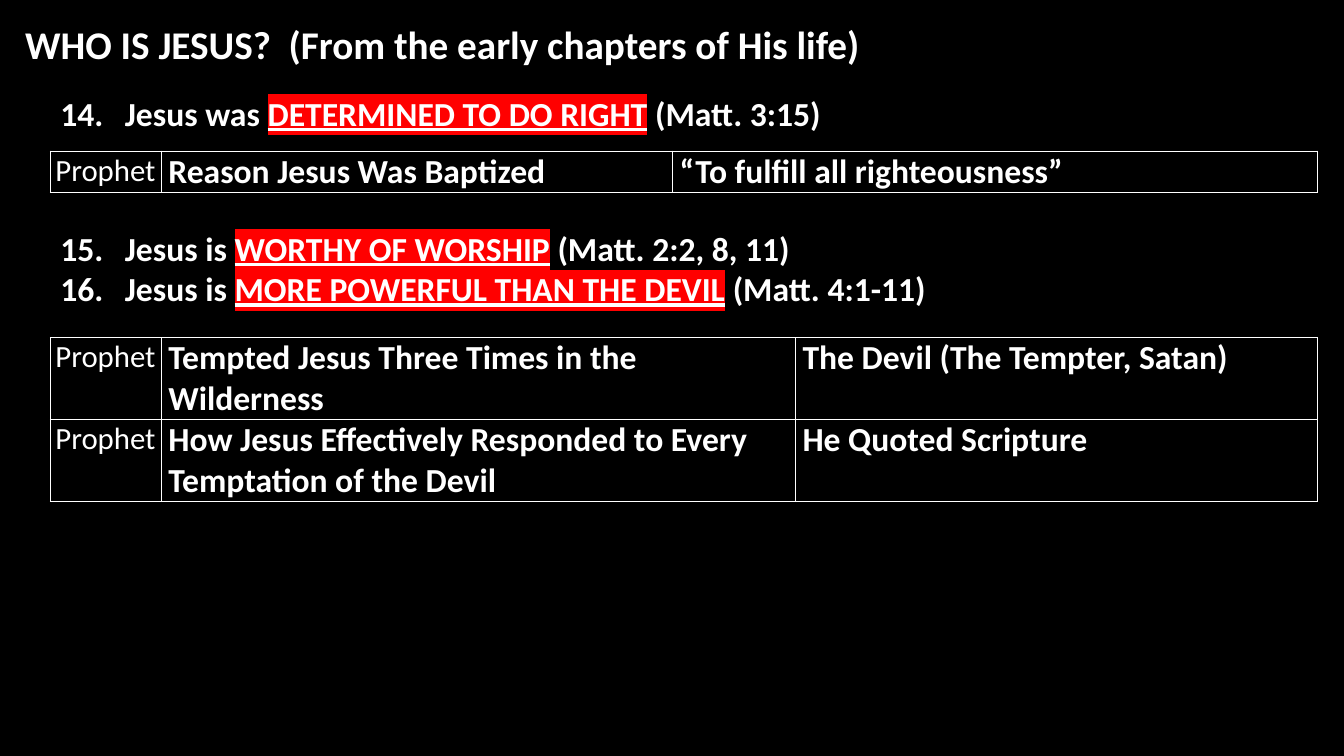
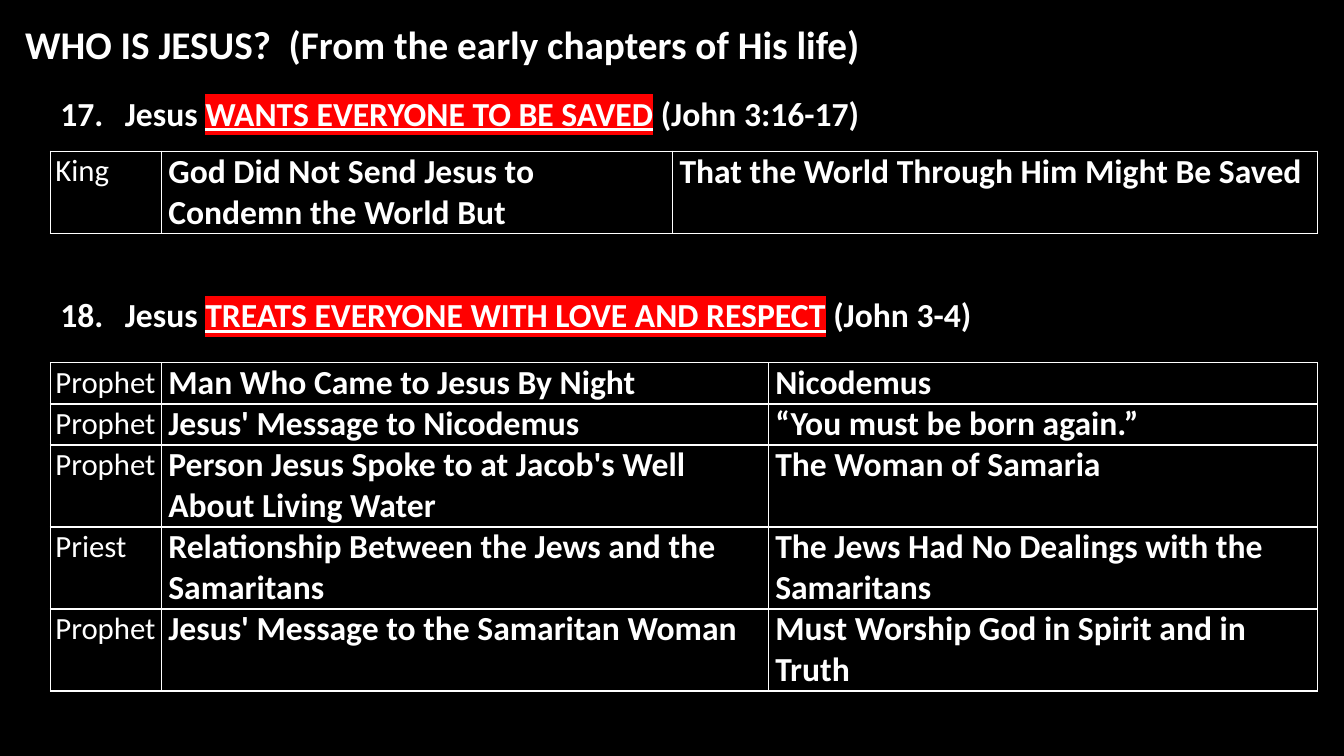
import pptx
import pptx.dml.color
import pptx.enum.text
import pptx.oxml
import pptx.oxml.ns
import pptx.util

BLACK = pptx.dml.color.RGBColor(0x00, 0x00, 0x00)
WHITE = pptx.dml.color.RGBColor(0xFF, 0xFF, 0xFF)
RED = pptx.dml.color.RGBColor(0xFF, 0x00, 0x00)
FONT = "Calibri"

TITLE = "WHO IS JESUS?  (From the early chapters of His life)"

# Points: (top, [(number, lead, answer, reference)])
# Tables: (top, width of question column, [(role, question, answer, lines of text)])
SLIDES = [
    {
        "points": [
            (87, [("14.", "Jesus was ", "DETERMINED TO DO RIGHT", " (Matt. 3:15)")]),
            (221, [("15.", "Jesus is ", "WORTHY OF WORSHIP", " (Matt. 2:2, 8, 11)"),
                   ("16.", "Jesus is ", "MORE POWERFUL THAN THE DEVIL", " (Matt. 4:1-11)")]),
        ],
        "tables": [
            (150, 507, [
                ("Prophet", "Reason Jesus Was Baptized", "“To fulfill all righteousness”", 1),
            ]),
            (335, 629, [
                ("Prophet", "Tempted Jesus Three Times in the Wilderness",
                 "The Devil (The Tempter, Satan)", 2),
                ("Prophet", "How Jesus Effectively Responded to Every Temptation of the Devil",
                 "He Quoted Scripture", 2),
            ]),
        ],
    },
    {
        "points": [
            (87, [("17.", "Jesus ", "WANTS EVERYONE TO BE SAVED", " (John 3:16-17)")]),
            (287, [("18.", "Jesus ", "TREATS EVERYONE WITH LOVE AND RESPECT", " (John 3-4)")]),
        ],
        "tables": [
            (150, 507, [
                ("King", "God Did Not Send Jesus to Condemn the World But",
                 "That the World Through Him Might Be Saved", 2),
            ]),
            (360, 602, [
                ("Prophet", "Man Who Came to Jesus By Night", "Nicodemus", 1),
                ("Prophet", "Jesus' Message to Nicodemus", "“You must be born again.”", 1),
                ("Prophet", "Person Jesus Spoke to at Jacob's Well About Living Water",
                 "The Woman of Samaria", 2),
                ("Priest", "Relationship Between the Jews and the Samaritans",
                 "The Jews Had No Dealings with the Samaritans", 2),
                ("Prophet", "Jesus' Message to the Samaritan Woman",
                 "Must Worship God in Spirit and in Truth", 2),
            ]),
        ],
    },
]

LEFT, TABLE_W, ROLE_W, POINT_W = 50, 1257, 110, 1210
LINE_H = 40
NUMBER_W = 64
ROLE_INSETS = (5, 1, 1, 0)
TEXT_INSETS = (7, 0, 7, 0)


def px(n):
    """Hundredths of an inch to EMU."""
    return pptx.util.Emu(n * 9144)


def add_text(p, text, size=24, bold=True, underline=False, highlight=None):
    r = p.add_run()
    r.text = text
    f = r.font
    f.name, f.size, f.bold, f.underline = FONT, pptx.util.Pt(size), bold, underline
    f.color.rgb = WHITE
    if highlight is not None:
        mark = pptx.oxml.parse_xml(
            f'<a:highlight {pptx.oxml.ns.nsdecls("a")}><a:srgbClr val="{highlight}"/></a:highlight>')
        r._r.rPr.find(pptx.oxml.ns.qn("a:solidFill")).addnext(mark)


def add_title(slide):
    sp = slide.shapes.title
    sp.left, sp.top, sp.width, sp.height = px(15), px(15), px(1166), px(57)
    tf = sp.text_frame
    tf.auto_size = pptx.enum.text.MSO_AUTO_SIZE.NONE
    tf.vertical_anchor = pptx.enum.text.MSO_ANCHOR.TOP
    p = tf.paragraphs[0]
    p.alignment = pptx.enum.text.PP_ALIGN.LEFT
    add_text(p, TITLE, size=28)


def add_points(slide, top, points):
    sp = slide.shapes.add_textbox(px(LEFT), px(top), px(POINT_W), px(10 + LINE_H * len(points)))
    tf = sp.text_frame
    tf.word_wrap = True
    for i, (number, lead, answer, reference) in enumerate(points):
        p = tf.add_paragraph() if i else tf.paragraphs[0]
        pPr = p._p.get_or_add_pPr()
        pPr.set("marL", str(px(NUMBER_W)))
        pPr.set("indent", str(px(-NUMBER_W)))
        add_text(p, f"{number}\t{lead}")
        add_text(p, answer, underline=True, highlight=RED)
        add_text(p, reference)


def add_borders(cell):
    tcPr = cell._tc.get_or_add_tcPr()
    for i, side in enumerate(("lnL", "lnR", "lnT", "lnB")):
        tcPr.insert(i, pptx.oxml.parse_xml(
            f'<a:{side} {pptx.oxml.ns.nsdecls("a")} w="{pptx.util.Pt(1)}">'
            f'<a:solidFill><a:srgbClr val="{WHITE}"/></a:solidFill></a:{side}>'))


def add_grid(slide, top, question_w, rows):
    height = LINE_H * sum(row[-1] for row in rows)
    table = slide.shapes.add_table(
        len(rows), 3, px(LEFT), px(top), px(TABLE_W), px(height)).table
    table.first_row = table.horz_banding = False
    widths = (ROLE_W, question_w, TABLE_W - ROLE_W - question_w)
    for column, width in zip(table.columns, widths):
        column.width = px(width)
    for i, (*texts, lines) in enumerate(rows):
        table.rows[i].height = px(LINE_H * lines)
        for j, text in enumerate(texts):
            cell = table.cell(i, j)
            insets = TEXT_INSETS if j else ROLE_INSETS
            (cell.margin_left, cell.margin_top,
             cell.margin_right, cell.margin_bottom) = map(px, insets)
            cell.fill.background()
            add_borders(cell)
            add_text(cell.text_frame.paragraphs[0], text, size=24 if j else 22, bold=j > 0)


def main():
    prs = pptx.Presentation()
    prs.slide_width, prs.slide_height = px(1333), px(750)
    fill = prs.slide_master.background.fill
    fill.solid()
    fill.fore_color.rgb = BLACK
    for content in SLIDES:
        slide = prs.slides.add_slide(prs.slide_layouts[5])
        add_title(slide)
        for grid in content["tables"]:
            add_grid(slide, *grid)
        for points in content["points"]:
            add_points(slide, *points)
    prs.save("out.pptx")


if __name__ == "__main__":
    main()
